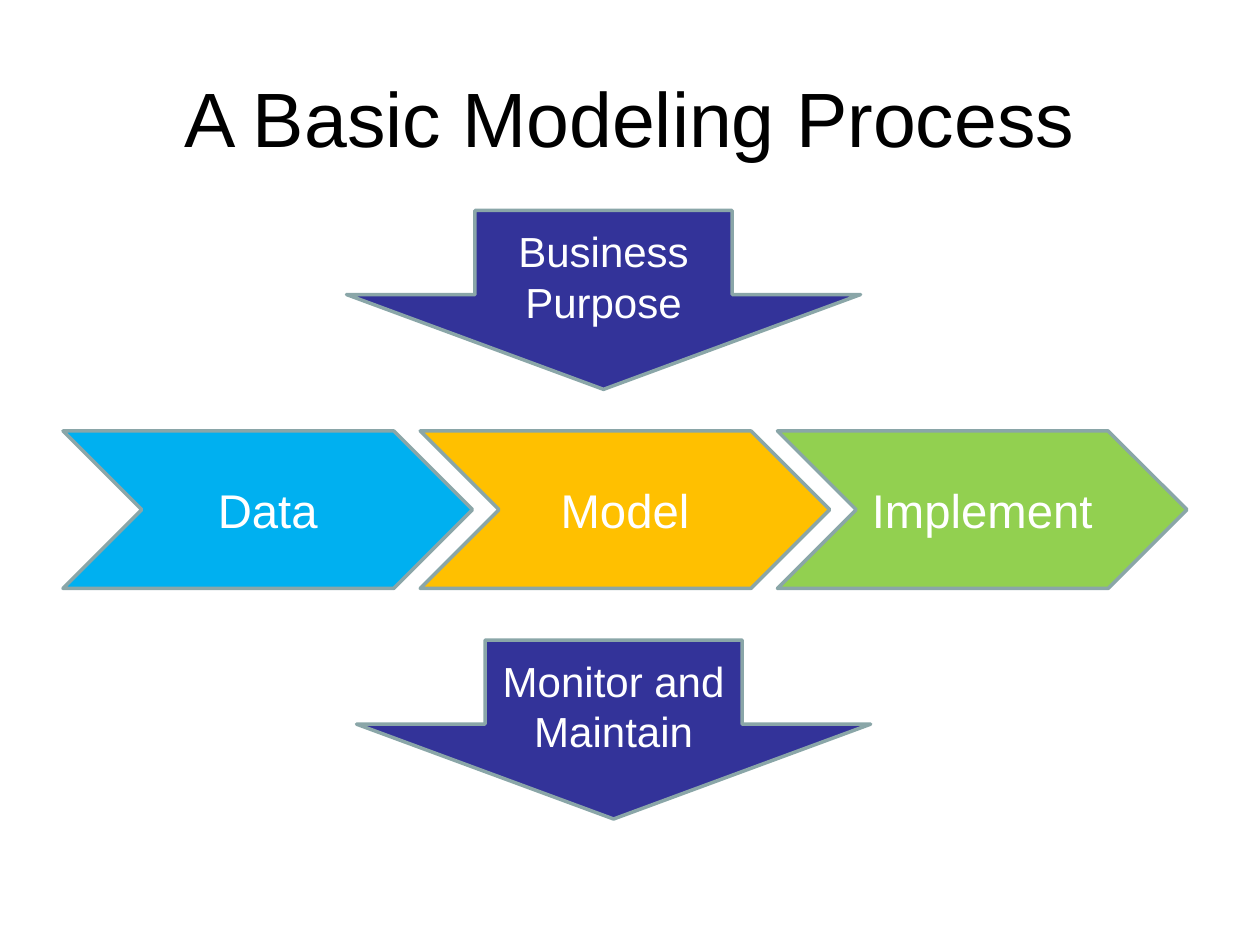
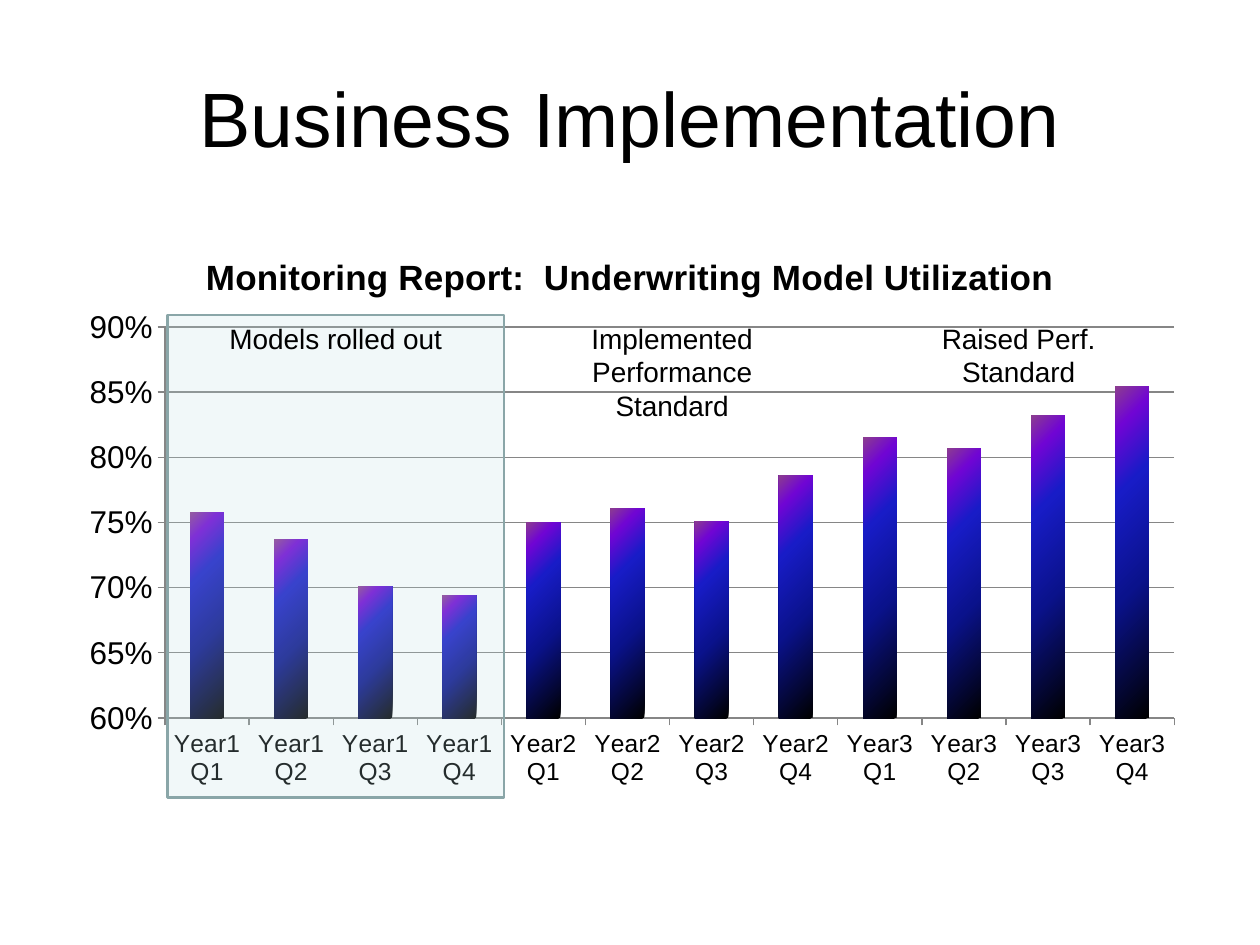
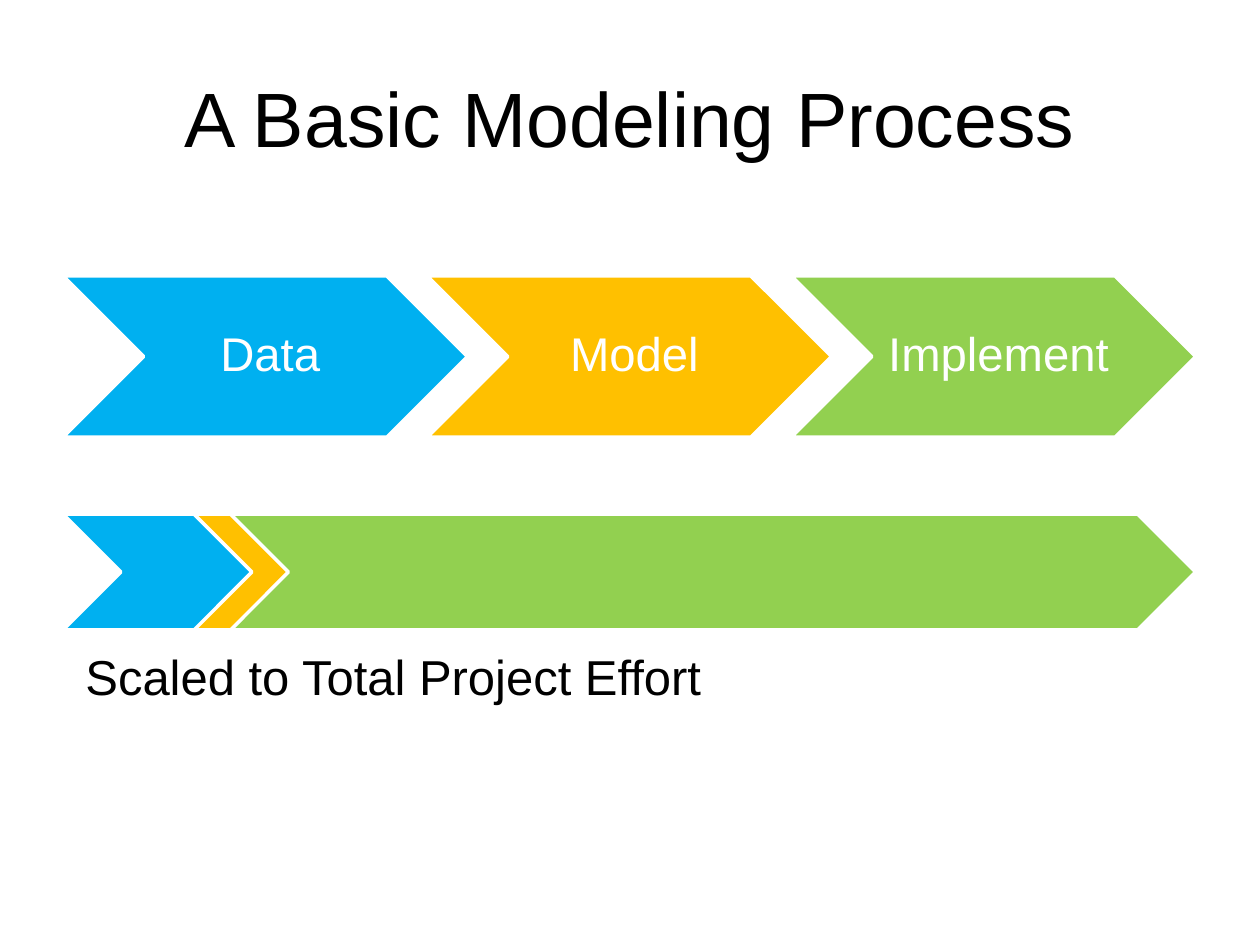
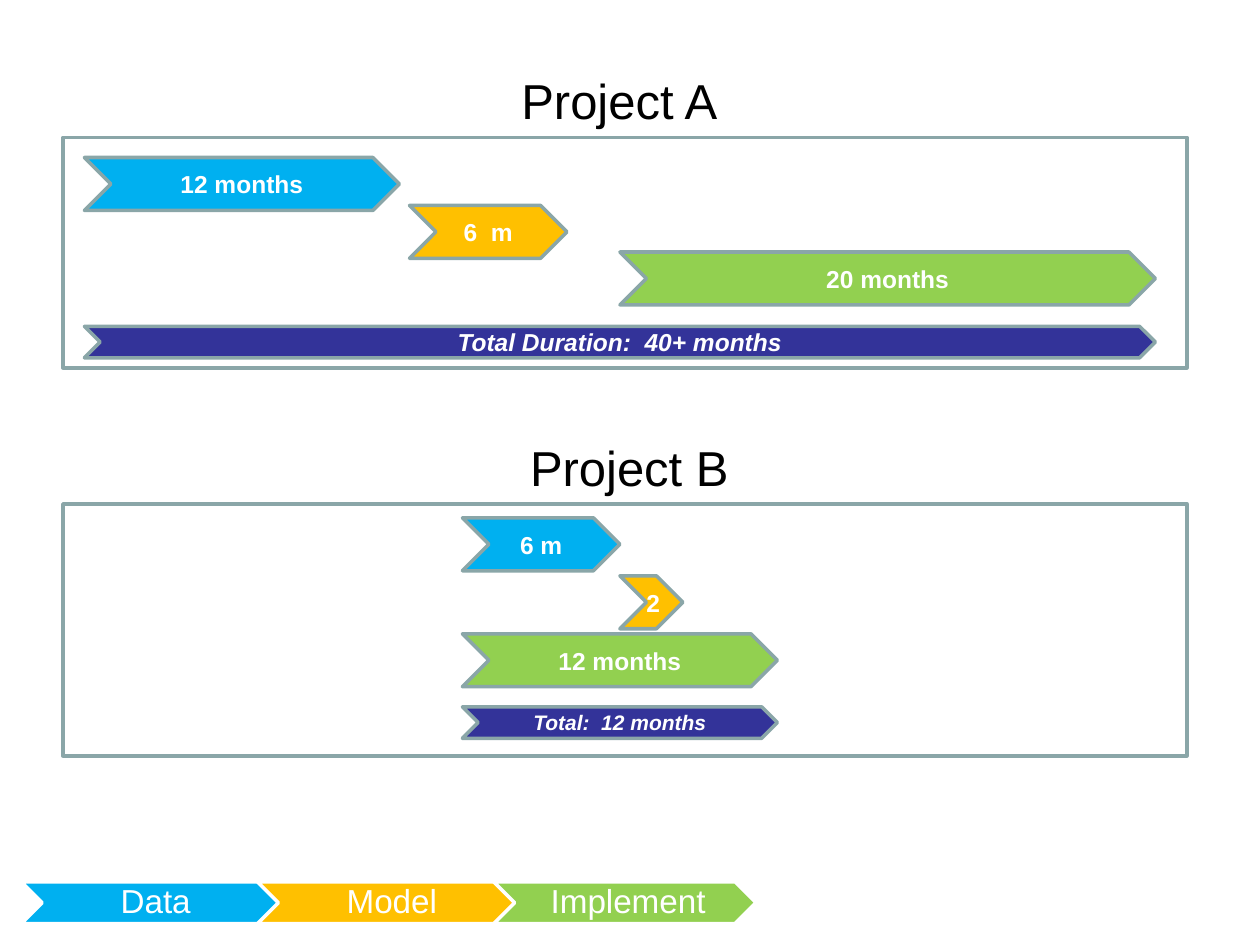
from dataclasses import dataclass

from pptx import Presentation
from pptx import util as u
from pptx.chart import data as chart_data
from pptx.dml.color import RGBColor
from pptx.enum import chart as charts, shapes, text
from pptx.oxml import parse_xml
from pptx.oxml.ns import nsdecls, qn

FONT = "Arial"
COLORS = {
    "black": "000000", "white": "FFFFFF", "navy": "333399", "edge": "8AA6A8",
    "data": "00B0F0", "model": "FFC000", "implement": "92D050",
    "highlight": "BBE0E3", "axis": "868686",
}
STEPS = {"Data": "data", "Model": "model", "Implement": "implement"}
BAR_STOPS = [(0, "000000"), (40, "0A128C"), (70, "181CC7"),
             (88, "7005D4"), (100, "8C3D91")]
TITLE_ONLY, BLANK = 5, 6
CHEVRON = shapes.MSO_SHAPE.CHEVRON
DOWN_ARROW = shapes.MSO_SHAPE.DOWN_ARROW
RECTANGLE = shapes.MSO_SHAPE.RECTANGLE


@dataclass
class Area:
    left: float
    top: float
    width: float
    height: float

    def lengths(self) -> list:
        return [u.Inches(n) for n in (self.left, self.top, self.width, self.height)]


@dataclass
class Style:
    size: float
    color: str = "black"
    bold: bool = False
    italic: bool = False
    align: text.PP_ALIGN = text.PP_ALIGN.CENTER


@dataclass
class Phase:
    """One labelled time span on a project plan."""
    label: str
    color: str
    area: Area
    size: float = 14
    italic: bool = False


# Shared drawing functions

def rgb(name: str) -> RGBColor:
    return RGBColor.from_string(COLORS[name])


def set_font(font, style: Style) -> None:
    font.name = FONT
    font.size = u.Pt(style.size)
    font.bold = style.bold
    font.italic = style.italic
    font.color.rgb = rgb(style.color)


def write(frame, lines: list[str], style: Style) -> None:
    for index, line in enumerate(lines):
        para = frame.add_paragraph() if index else frame.paragraphs[0]
        para.text = line
        para.alignment = style.align
        set_font(para.font, style)


def add_page(deck, title: str = ""):
    page = deck.slides.add_slide(deck.slide_layouts[TITLE_ONLY if title else BLANK])
    if title:
        holder = page.shapes.title
        holder.left, holder.top, holder.width, holder.height = Area(
            0.5, 0.3, 9, 1.25).lengths()
        holder.text_frame.vertical_anchor = text.MSO_ANCHOR.MIDDLE
        write(holder.text_frame, [title], Style(44))
    return page


def add_figure(parent, kind, area: Area, fill: str = "", line: str = "edge",
               weight: float = 2, lines: list[str] | None = None,
               style: Style | None = None):
    figure = parent.add_shape(kind, *area.lengths())
    figure.shadow.inherit = False
    if fill:
        figure.fill.solid()
        figure.fill.fore_color.rgb = rgb(fill)
    else:
        figure.fill.background()
    figure.line.color.rgb = rgb(line)
    figure.line.width = u.Pt(weight)
    if lines:
        figure.text_frame.vertical_anchor = text.MSO_ANCHOR.MIDDLE
        write(figure.text_frame, lines, style)
    return figure


def add_text(parent, area: Area, lines: list[str], style: Style):
    box = parent.add_textbox(*area.lengths())
    box.text_frame.word_wrap = True
    box.text_frame.auto_size = text.MSO_AUTO_SIZE.SHAPE_TO_FIT_TEXT
    write(box.text_frame, lines, style)
    return box


def add_process(page, first: Area, pitch: float, size: float,
                inset: float, margin: float) -> None:
    """Draw the three grouped steps with a label over each chevron."""
    group = page.shapes.add_group_shape().shapes
    for index, (label, color) in enumerate(STEPS.items()):
        left = first.left + index * pitch
        add_figure(group, CHEVRON, Area(left, first.top, first.width, first.height),
                   color, "white")
        half = first.height / 2
        area = Area(left + half, first.top, first.width - first.height, first.height)
        box = add_text(group, area, [label], Style(size, "white"))
        frame = box.text_frame
        frame.auto_size = text.MSO_AUTO_SIZE.NONE
        frame.vertical_anchor = text.MSO_ANCHOR.MIDDLE
        frame.margin_left = u.Inches(inset)
        frame.margin_right = frame.margin_top = frame.margin_bottom = u.Inches(margin)
        frame.paragraphs[0].line_spacing = 0.9


# Slide 1: process with purpose and upkeep

def build_process(deck) -> None:
    page = add_page(deck, "A Basic Modeling Process")
    for left, top, lines in ((2.75, 1.67, ["Business", "Purpose"]),
                             (2.83, 5.08, ["Monitor and", "Maintain"])):
        arrow = add_figure(page.shapes, DOWN_ARROW, Area(left, top, 4.08, 1.42),
                           "navy", lines=lines, style=Style(24, "white"))
        arrow.adjustments[0] = 0.5
        arrow.adjustments[1] = 0.53
    for index, (label, color) in reversed(list(enumerate(STEPS.items()))):
        add_figure(page.shapes, CHEVRON, Area(0.5 + index * 2.835, 3.42, 3.25, 1.25),
                   color, lines=[label], style=Style(27, "white"))


# Slide 2: utilization chart

def fill_bars(series) -> None:
    stops = "".join(f'<a:gs pos="{pos * 1000}"><a:srgbClr val="{color}"/></a:gs>'
                    for pos, color in BAR_STOPS)
    series._element.get_or_add_spPr().append(parse_xml(
        f'<a:gradFill {nsdecls("a")}><a:gsLst>{stops}</a:gsLst>'
        '<a:lin ang="13500000" scaled="0"/></a:gradFill>'))


def place_plot(chart, area: Area) -> None:
    """Fix the inner plot area, in shares of the chart."""
    plot_area = chart._chartSpace.chart.plotArea
    for layout in plot_area.findall(qn("c:layout")):
        plot_area.remove(layout)
    sides = "".join(f'<c:{tag} val="{value}"/>' for tag, value in (
        ("x", area.left), ("y", area.top), ("w", area.width), ("h", area.height)))
    plot_area.insert(0, parse_xml(
        f'<c:layout {nsdecls("c")}><c:manualLayout><c:layoutTarget val="inner"/>'
        f'<c:xMode val="edge"/><c:yMode val="edge"/>{sides}'
        '</c:manualLayout></c:layout>'))


def add_utilization_chart(page) -> None:
    figures = chart_data.CategoryChartData(number_format="0%")
    figures.categories = [f"Year{year} Q{quarter}"
                          for year in (1, 2, 3) for quarter in (1, 2, 3, 4)]
    figures.add_series("Series 1", [0.758, 0.737, 0.701, 0.694, 0.75, 0.761,
                                    0.751, 0.786, 0.815, 0.807, 0.832, 0.854])
    chart = page.shapes.add_chart(charts.XL_CHART_TYPE.COLUMN_CLUSTERED,
                                  *Area(0.5, 1.83, 9, 4.5).lengths(), figures).chart
    set_font(chart.font, Style(18))
    chart.has_legend = False
    chart.has_title = True
    write(chart.chart_title.text_frame,
          ["Monitoring Report:  Underwriting Model Utilization"], Style(20, bold=True))
    chart.chart_title.include_in_layout = False
    place_plot(chart, Area(0.09, 0.17, 0.89, 0.69))

    plot = chart.plots[0]
    plot.gap_width = 150
    plot.vary_by_categories = False
    fill_bars(plot.series[0])

    values = chart.value_axis
    values.minimum_scale, values.maximum_scale, values.major_unit = 0.6, 0.9, 0.05
    values.tick_labels.number_format = "0%"
    values.tick_labels.number_format_is_linked = False
    values.has_major_gridlines = True
    for axis, size in ((values, 18), (chart.category_axis, 14)):
        axis.major_tick_mark = charts.XL_TICK_MARK.OUTSIDE
        set_font(axis.tick_labels.font, Style(size))
        axis.format.line.color.rgb = rgb("axis")
    values.major_gridlines.format.line.color.rgb = rgb("axis")


def build_implementation(deck) -> None:
    page = add_page(deck, "Business Implementation")
    add_utilization_chart(page)
    rollout = add_figure(page.shapes, RECTANGLE, Area(1.33, 2.5, 2.67, 3.83),
                         "highlight", weight=1.5)
    tint = rollout._element.spPr.find(qn("a:solidFill"))[0]
    tint.append(parse_xml(f'<a:alpha {nsdecls("a")} val="20000"/>'))
    for left, height, lines in (
            (1.5, 0.37, ["Models rolled out"]),
            (4.17, 0.91, ["Implemented Performance Standard"]),
            (6.92, 0.64, ["Raised Perf.", "Standard"])):
        add_text(page.shapes, Area(left, 2.5, 2.33, height), lines, Style(16))


# Slide 3: process scaled to effort

def build_effort(deck) -> None:
    page = add_page(deck, "A Basic Modeling Process")
    add_process(page, Area(0.5, 2.19, 3.21, 1.28), 2.89, 27, 0.12, 0.04)
    group = page.shapes.add_group_shape().shapes
    spans = ((0.5, 1.81), (1.54, 1.06), (1.83, 7.66))
    for color, (left, width) in zip(STEPS.values(), spans):
        add_figure(group, CHEVRON, Area(left, 4.08, width, 0.92), color, "white")
    add_text(page.shapes, Area(0.58, 5.08, 5.83, 0.57),
             ["Scaled to Total Project Effort"], Style(28, align=text.PP_ALIGN.LEFT))


# Slide 4: two project plans

PHASES = [
    Phase("12 months", "data", Area(0.67, 1.25, 2.5, 0.42)),
    Phase("6  m", "model", Area(3.25, 1.63, 1.25, 0.42)),
    Phase("20 months", "implement", Area(4.92, 2, 4.25, 0.42)),
    Phase("6 m", "data", Area(3.67, 4.11, 1.25, 0.42)),
    Phase("2", "model", Area(4.92, 4.57, 0.5, 0.42)),
    Phase("12 months", "implement", Area(3.67, 5.03, 2.5, 0.42)),
    Phase("Total Duration:  40+ months", "navy", Area(0.67, 2.59, 8.5, 0.25),
          italic=True),
    Phase("Total:  12 months", "navy", Area(3.67, 5.61, 2.5, 0.25), 12, True),
]


def build_projects(deck) -> None:
    page = add_page(deck)
    for top, height in ((4, 2), (1.09, 1.83)):
        add_figure(page.shapes, RECTANGLE, Area(0.5, top, 8.92, height))
    add_process(page, Area(0.17, 7, 2.08, 0.33), 1.875, 19, 0.08, 0.03)
    for phase in PHASES:
        add_figure(page.shapes, CHEVRON, phase.area, phase.color, lines=[phase.label],
                   style=Style(phase.size, "white", True, phase.italic))
    for name, left, top in (("Project A", 3.75, 0.51), ("Project B", 3.83, 3.42)):
        add_text(page.shapes, Area(left, top, 2.33, 0.57), [name], Style(28))


def main() -> None:
    deck = Presentation()
    deck.slide_width, deck.slide_height = u.Inches(10), u.Inches(7.5)
    for build in (build_process, build_implementation, build_effort, build_projects):
        build(deck)
    deck.save("out.pptx")


if __name__ == "__main__":
    main()
